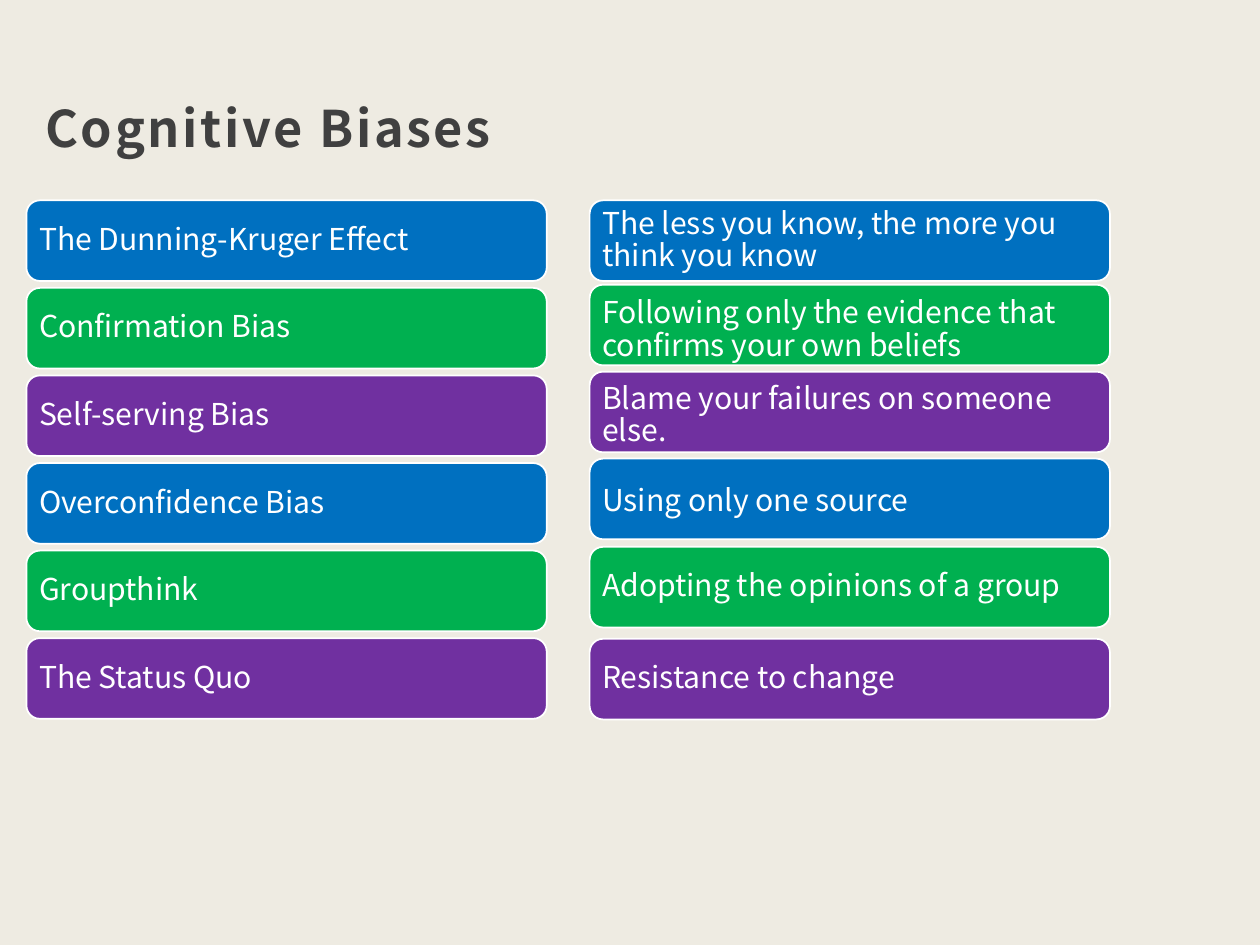
from itertools import cycle

from pptx import Presentation
from pptx.dml.color import RGBColor
from pptx.enum import shapes, text
from pptx.util import Inches, Pt

COLORS = {"back": "EEEBE2", "title": "404040", "white": "FFFFFF",
          "blue": "0070C0", "green": "00B050", "purple": "7030A0"}
FONT = "Noto Sans CJK JP"
TERMS = ["The Dunning-Kruger Effect", "Confirmation Bias", "Self-serving Bias",
         "Overconfidence Bias", "Groupthink", "The Status Quo"]
NOTES = [("The less you know, the more you think you know", 1.59, 1.62),
         ("Following only the evidence that confirms your own beliefs", 2.26, 2.33),
         ("Blame your failures on someone else.", 2.95, 3.01),
         ("Using only one source", 3.64, 3.69),
         ("Adopting the opinions of a group", 4.34, 4.37),
         ("Resistance to change", 5.07, 5.1)]


def color(name):
    return RGBColor.from_string(COLORS[name])


def write(frame, words, size=17.2, ink="white", bold=False, lead=0.9,
          after=6, track=0, anchor="MIDDLE", pads=(0.07,) * 4):
    frame.word_wrap = True
    frame.vertical_anchor = getattr(text.MSO_ANCHOR, anchor)
    for side, pad in zip(("left", "top", "right", "bottom"), pads):
        setattr(frame, f"margin_{side}", Inches(pad))
    para = frame.paragraphs[0]
    para.line_spacing = lead
    para.space_after = Pt(after)
    run = para.add_run()
    run.text = words
    run.font.name = FONT
    run.font.size = Pt(size)
    run.font.bold = bold
    run.font.color.rgb = color(ink)
    if track:
        run.font._element.set("spc", str(round(track * 100)))


class Deck:
    def __init__(self):
        self.prs = Presentation()
        self.prs.slide_width = Inches(10)
        self.prs.slide_height = Inches(7.5)
        self.slide = self.prs.slides.add_slide(self.prs.slide_layouts[6])
        fill = self.slide.background.fill
        fill.solid()
        fill.fore_color.rgb = color("back")

    def label(self, words, x, y, w, h, **style):
        box = self.slide.shapes.add_textbox(*map(Inches, (x, y, w, h)))
        write(box.text_frame, words, **style)

    def bar(self, words, x, y, line, tint):
        shape = self.slide.shapes.add_shape(
            shapes.MSO_SHAPE.ROUNDED_RECTANGLE, *map(Inches, (x, y, 4.13, 0.64)))
        shape.shadow.inherit = False
        shape.fill.solid()
        shape.fill.fore_color.rgb = color(tint)
        shape.line.color.rgb = color("white")
        shape.line.width = Pt(1)
        self.label(words, x + 0.03, line, 4.06, 0.58)


def main():
    deck = Deck()
    tints = ("blue", "green", "purple")
    for row, (term, tint) in enumerate(zip(TERMS, cycle(tints))):
        top = 1.59 + row * 0.695
        deck.bar(term, 0.21, top, top + 0.03, tint)
    for (note, top, line), tint in zip(NOTES, cycle(tints)):
        deck.bar(note, 4.68, top, line, tint)
    deck.label("Cognitive Biases", 0.24, 0.58, 5.34, 0.77, size=28.8,
               ink="title", bold=True, lead=1.3, after=0, track=1.5,
               anchor="BOTTOM", pads=(0.12, 0.12, 0.12, 0.1))
    deck.prs.save("out.pptx")


if __name__ == "__main__":
    main()
